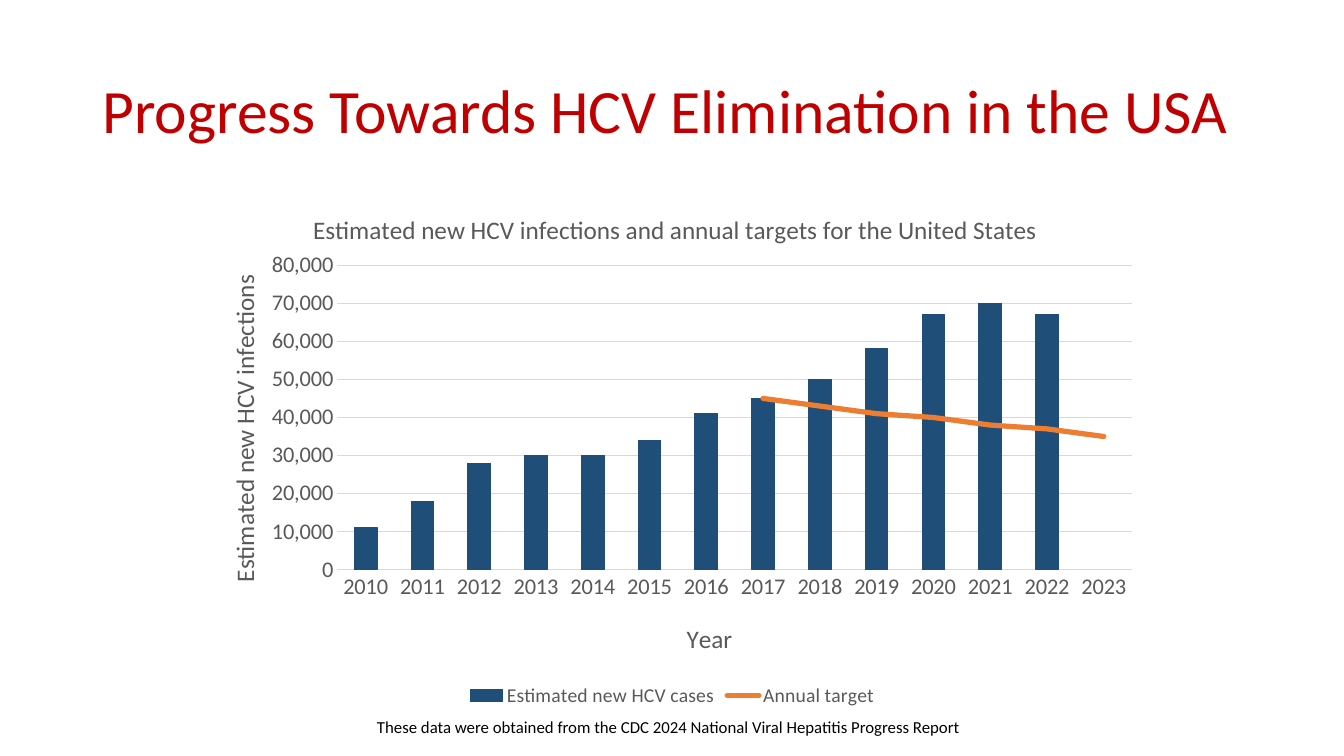
from dataclasses import dataclass

import pptx
import pptx.chart.data
import pptx.dml.color
import pptx.enum.chart
import pptx.enum.text
import pptx.oxml
import pptx.oxml.ns
import pptx.util
from pptx.util import Inches, Pt

RED = pptx.dml.color.RGBColor(0xC0, 0x00, 0x00)
BLACK = pptx.dml.color.RGBColor(0x00, 0x00, 0x00)
GRAY = pptx.dml.color.RGBColor(0x59, 0x59, 0x59)
GRID_GRAY = pptx.dml.color.RGBColor(0xD9, 0xD9, 0xD9)
NAVY = pptx.dml.color.RGBColor(0x1F, 0x4E, 0x79)
ORANGE = pptx.dml.color.RGBColor(0xED, 0x7D, 0x31)
FONT = "Calibri"

YEARS = [str(year) for year in range(2010, 2024)]
CASES = [11000, 18000, 28000, 30000, 30000, 34000, 41000, 45000, 50000,
         58000, 67000, 70000, 67000, None]
TARGETS = [None] * 7 + [45000, 43000, 41000, 40000, 38000, 37000, 35000]


@dataclass(frozen=True)
class Caption:
    text: str
    left: float
    top: float
    width: float
    height: float
    size: int
    color: pptx.dml.color.RGBColor
    wrap: bool
    anchor: pptx.enum.text.MSO_ANCHOR
    line_spacing: float


@dataclass(frozen=True)
class ChartTitle:
    """A title inside the chart; x and y are fractions of the chart's size."""
    text: str
    x: float
    y: float


HEADLINE = Caption("Progress Towards HCV Elimination in the USA",
                   0.92, 0.4, 11.5, 1.45, 44, RED, True,
                   pptx.enum.text.MSO_ANCHOR.MIDDLE, 0.9)
SOURCE_NOTE = Caption("These data were obtained from the CDC 2024 National Viral "
                      "Hepatitis Progress Report",
                      3.64, 7.06, 6.05, 0.3, 12, BLACK, False,
                      pptx.enum.text.MSO_ANCHOR.TOP, 1.0)
CHART_TITLE = ChartTitle(
    "Estimated new HCV infections and annual targets for the United States", 0.12, 0.04)
YEAR_TITLE = ChartTitle("Year", 0.51, 0.82)
INFECTIONS_TITLE = ChartTitle("Estimated new HCV infections", 0.03, 0.16)


def style_font(font, size: int, color: pptx.dml.color.RGBColor) -> None:
    font.name = FONT
    font.size = Pt(size)
    font.bold = False
    font.color.rgb = color


def add_caption(slide, caption: Caption) -> None:
    box = slide.shapes.add_textbox(Inches(caption.left), Inches(caption.top),
                                   Inches(caption.width), Inches(caption.height))
    frame = box.text_frame
    frame.word_wrap = caption.wrap
    frame.vertical_anchor = caption.anchor
    paragraph = frame.paragraphs[0]
    paragraph.line_spacing = caption.line_spacing
    run = paragraph.add_run()
    run.text = caption.text
    style_font(run.font, caption.size, caption.color)


def set_layout(element, index: int, target: str = "", **fractions: float) -> None:
    """Place a chart part by fractions of the chart's size."""
    for old in element.findall(pptx.oxml.ns.qn("c:layout")):
        element.remove(old)
    settings = {"layoutTarget": target} if target else {}
    settings |= {"xMode": "edge", "yMode": "edge"} | fractions
    children = "".join(f'<c:{tag} val="{value}"/>' for tag, value in settings.items())
    element.insert(index, pptx.oxml.parse_xml(
        f'<c:layout {pptx.oxml.ns.nsdecls("c")}>'
        f"<c:manualLayout>{children}</c:manualLayout></c:layout>"))


def set_title(owner, title: ChartTitle) -> None:
    """Title a chart or an axis."""
    owner.has_title = True
    holder = owner.chart_title if hasattr(owner, "chart_title") else owner.axis_title
    run = holder.text_frame.paragraphs[0].add_run()
    run.text = title.text
    style_font(run.font, 18, GRAY)
    set_layout(holder._element, 1, x=title.x, y=title.y)


def move_targets_to_line(chart) -> None:
    """Turn the second column series into a line on the same axes."""
    qn = pptx.oxml.ns.qn
    columns = chart.plots[0]._element
    targets = columns.findall(qn("c:ser"))[1]
    for bar_only in targets.findall(qn("c:invertIfNegative")):
        targets.remove(bar_only)
    axis_ids = "".join(f'<c:axId val="{axis.get("val")}"/>'
                       for axis in columns.findall(qn("c:axId")))
    line_plot = pptx.oxml.parse_xml(
        f'<c:lineChart {pptx.oxml.ns.nsdecls("c")}><c:grouping val="standard"/>'
        f'<c:varyColors val="0"/><c:marker val="1"/>{axis_ids}</c:lineChart>')
    line_plot.insert(2, targets)
    columns.addnext(line_plot)


def style_axis(axis, title: ChartTitle) -> None:
    axis.major_tick_mark = pptx.enum.chart.XL_TICK_MARK.NONE
    axis.minor_tick_mark = pptx.enum.chart.XL_TICK_MARK.NONE
    style_font(axis.tick_labels.font, 16, GRAY)
    set_title(axis, title)


def style_line(line, color: pptx.dml.color.RGBColor, width: float) -> None:
    line.color.rgb = color
    line.width = Pt(width)


def add_infections_chart(slide) -> None:
    data = pptx.chart.data.CategoryChartData(number_format="#,##0")
    data.categories = YEARS
    data.add_series("Estimated new HCV cases", CASES)
    data.add_series("Annual target", TARGETS)
    chart = slide.shapes.add_chart(
        pptx.enum.chart.XL_CHART_TYPE.COLUMN_CLUSTERED,
        Inches(1.92), Inches(1.85), Inches(9.5), Inches(5.21), data).chart
    style_font(chart.font, 10, BLACK)
    move_targets_to_line(chart)

    column_plot, line_plot = chart.plots
    column_plot.gap_width = 150
    column_plot.vary_by_categories = False
    cases = column_plot.series[0]
    cases.format.fill.solid()
    cases.format.fill.fore_color.rgb = NAVY
    style_line(cases.format.line, NAVY, 0.75)
    targets = line_plot.series[0]
    targets.smooth = False
    targets.marker.style = pptx.enum.chart.XL_MARKER_STYLE.NONE
    style_line(targets.format.line, ORANGE, 3.75)
    target_shape = targets._element.find(pptx.oxml.ns.qn("c:spPr"))
    target_shape.find(pptx.oxml.ns.qn("a:ln")).set("cap", "rnd")

    years, infections = chart.category_axis, chart.value_axis
    style_axis(years, YEAR_TITLE)
    style_line(years.format.line, GRID_GRAY, 0.75)
    style_axis(infections, INFECTIONS_TITLE)
    infections.minimum_scale, infections.maximum_scale = 0, 80000
    infections.major_unit = 10000
    infections.tick_labels.number_format = "#,##0"
    infections.tick_labels.number_format_is_linked = False
    infections.format.line.fill.background()
    style_line(infections.major_gridlines.format.line, GRID_GRAY, 0.75)

    set_title(chart, CHART_TITLE)
    chart.has_legend = True
    chart.legend.position = pptx.enum.chart.XL_LEGEND_POSITION.BOTTOM
    chart.legend.include_in_layout = False
    style_font(chart.legend.font, 14, GRAY)
    plot_area = column_plot._element.getparent()
    set_layout(plot_area, 0, "inner", x=0.15, y=0.15, w=0.83, h=0.58)


def main() -> None:
    deck = pptx.Presentation()
    deck.slide_width, deck.slide_height = Inches(13.33), Inches(7.5)
    slide = deck.slides.add_slide(deck.slide_layouts[6])
    add_caption(slide, HEADLINE)
    add_infections_chart(slide)
    add_caption(slide, SOURCE_NOTE)
    deck.save("out.pptx")


if __name__ == "__main__":
    main()
